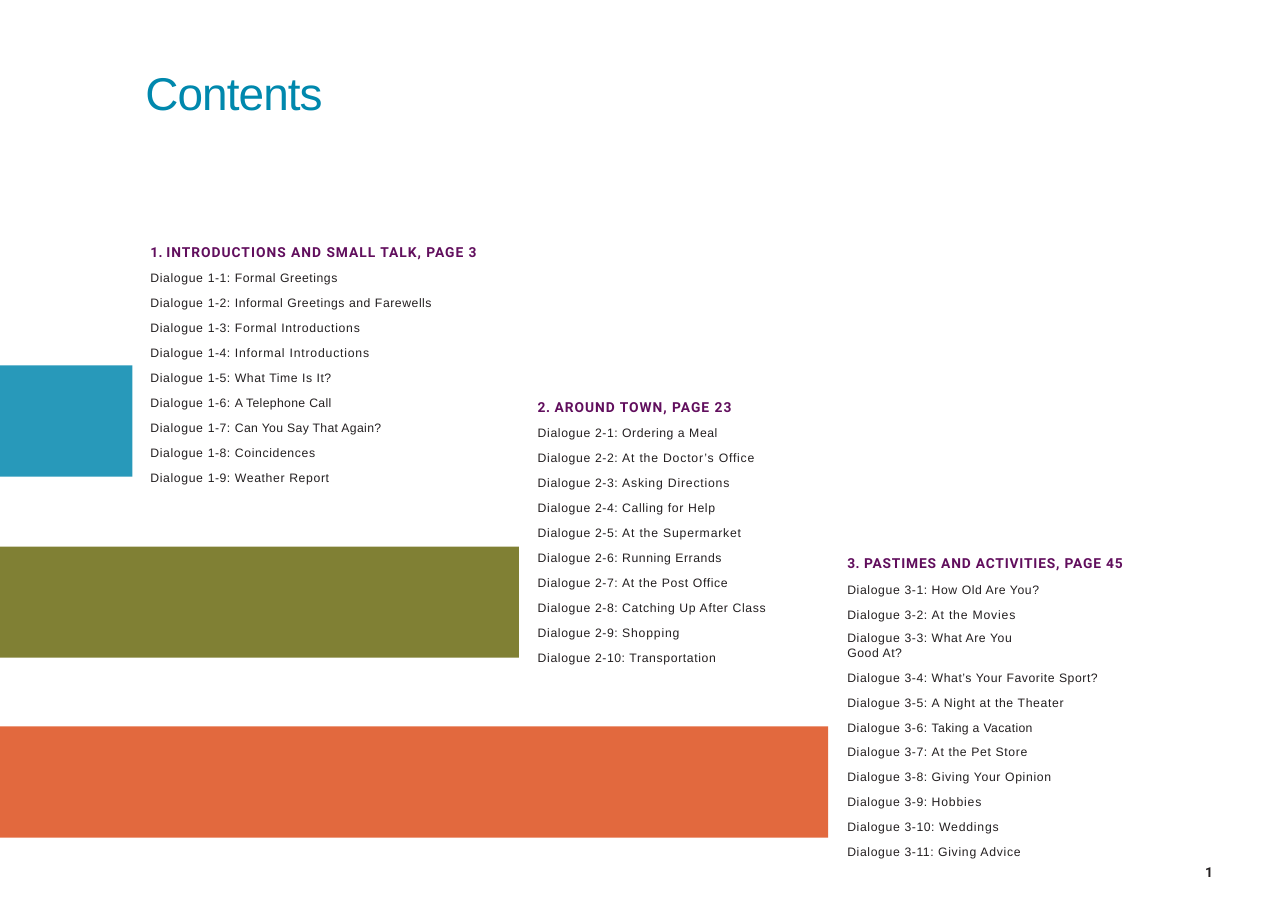
import pptx
import pptx.util
import pptx.dml.color
import pptx.enum.shapes
import pptx.enum.text
import pptx.oxml

Pt = pptx.util.Pt
COLORS = {"title": "0088AD", "heading": "610E5D", "text": "231F20",
          "blue": "2899BA", "olive": "808034", "orange": "E2693E"}
STYLES = {
    "title": {"name": "Arial", "size": Pt(30), "bold": False},
    "heading": {"name": "Roboto", "size": Pt(9), "bold": True},
    "entry": {"name": "Arial", "size": Pt(8), "bold": False},
}


def add_run(p, text, style, color, spacing):
    r = p.add_run()
    r.text = text
    for key, value in STYLES[style].items():
        setattr(r.font, key, value)
    r.font.color.rgb = pptx.dml.color.RGBColor.from_string(COLORS[color])
    r._r.get_or_add_rPr().set("spc", str(round(spacing * 100)))


def place(sp, left, top, width, height):
    sp.left, sp.top, sp.width, sp.height = Pt(left), Pt(top), Pt(width), Pt(height)
    tf = sp.text_frame
    frame = {"margin_left": 0, "margin_top": 0, "margin_right": 0, "margin_bottom": 0,
             "word_wrap": True, "auto_size": pptx.enum.text.MSO_AUTO_SIZE.NONE,
             "vertical_anchor": pptx.enum.text.MSO_ANCHOR.TOP}
    for key, value in frame.items():
        setattr(tf, key, value)
    tf.paragraphs[0].alignment = pptx.enum.text.PP_ALIGN.LEFT
    return tf


# Each chapter: heading, heading letter spacing, number letter spacing,
# left, width, gap above the first entry, entries with letter spacing
chapters = [
    ("INTRODUCTIONS AND SMALL TALK, PAGE 3", 0.65, 0.1, 98.3, 238, 6.2, [
        ("Formal Greetings", 0.35), ("Informal Greetings and Farewells", 0.35),
        ("Formal Introductions", 0.45), ("Informal Introductions", 0.5),
        ("What Time Is It?", 0.35), ("A Telephone Call", 0.2),
        ("Can You Say That Again?", 0.2), ("Coincidences", 0.4),
        ("Weather Report", 0.4)]),
    ("AROUND TOWN, PAGE 23", 0.65, 0.3, 351.4, 180, 6.2, [
        ("Ordering a Meal", 0.35), ("At the Doctor’s Office", 0.5),
        ("Asking Directions", 0.5), ("Calling for Help", 0.4),
        ("At the Supermarket", 0.5), ("Running Errands", 0.35),
        ("At the Post Office", 0.4), ("Catching Up After Class", 0.4),
        ("Shopping", 0.5), ("Transportation", 0.4)]),
    ("PASTIMES AND ACTIVITIES, PAGE 45", 0.55, 0.3, 553.7, 210, 7.5, [
        ("How Old Are You?", 0.35), ("At the Movies", 0.5),
        ("What Are You\nGood At?", 0.35), ("What’s Your Favorite Sport?", 0.35),
        ("A Night at the Theater", 0.4), ("Taking a Vacation", 0.2),
        ("At the Pet Store", 0.4), ("Giving Your Opinion", 0.4),
        ("Hobbies", 0.5), ("Weddings", 0.5), ("Giving Advice", 0.45)]),
]

prs = pptx.Presentation()
prs.slide_width, prs.slide_height = Pt(841.7), Pt(595.4)
s = prs.slides.add_slide(prs.slide_layouts[4])
bodies = list(s.placeholders)[1:]

# Colour bars
bars = [("blue", 238.8, 86.6), ("olive", 357.2, 339.1), ("orange", 474.7, 541.3)]
for color, top, width in bars:
    sp = s.shapes.add_shape(pptx.enum.shapes.MSO_SHAPE.RECTANGLE,
                            0, Pt(top), Pt(width), Pt(72.7))
    sp.shadow.inherit = False
    sp.fill.solid()
    sp.fill.fore_color.rgb = pptx.dml.color.RGBColor.from_string(COLORS[color])
    sp.line.fill.background()

# Title
tf = place(s.shapes.title, 95, 42, 130, 38)
add_run(tf.paragraphs[0], "Contents", "title", "title", -0.6)

# Chapter lists, stepping down the page
for i, (heading, spacing, number_spacing, left, width, gap, entries) in enumerate(chapters):
    height = 17 + 16 * len(entries)
    tf = place(bodies[i], left, 159.4 + 101.5 * i, width, height)
    p = tf.paragraphs[0]
    p.space_before = Pt(0)
    add_run(p, f"{i + 1}. ", "heading", "heading", number_spacing)
    add_run(p, heading, "heading", "heading", spacing)
    for n, (entry, entry_spacing) in enumerate(entries, 1):
        p = tf.add_paragraph()
        p.space_before = Pt(gap if n == 1 else 5.2 if "\n" in entry else 6.75)
        add_run(p, "Dialogue ", "entry", "text", 0.4)
        add_run(p, f"{i + 1}-{n}: ", "entry", "text", 0.3)
        for k, line in enumerate(entry.split("\n")):
            if k:
                p.add_line_break()
            add_run(p, line, "entry", "text", entry_spacing)
    for p in tf.paragraphs:
        pPr = p._p.get_or_add_pPr()
        pPr.set("marL", "0")
        pPr.set("indent", "0")
        pPr.append(pptx.oxml.parse_xml(
            '<a:buNone xmlns:a="http://schemas.openxmlformats.org/drawingml/2006/main"/>'))

# Unused body placeholder
sp = bodies[3]._element
sp.getparent().remove(sp)

# Page number
tf = place(s.shapes.add_textbox(0, 0, 0, 0), 787.6, 564.8, 10, 13)
add_run(tf.paragraphs[0], "1", "heading", "text", 0.1)

prs.save("out.pptx")
